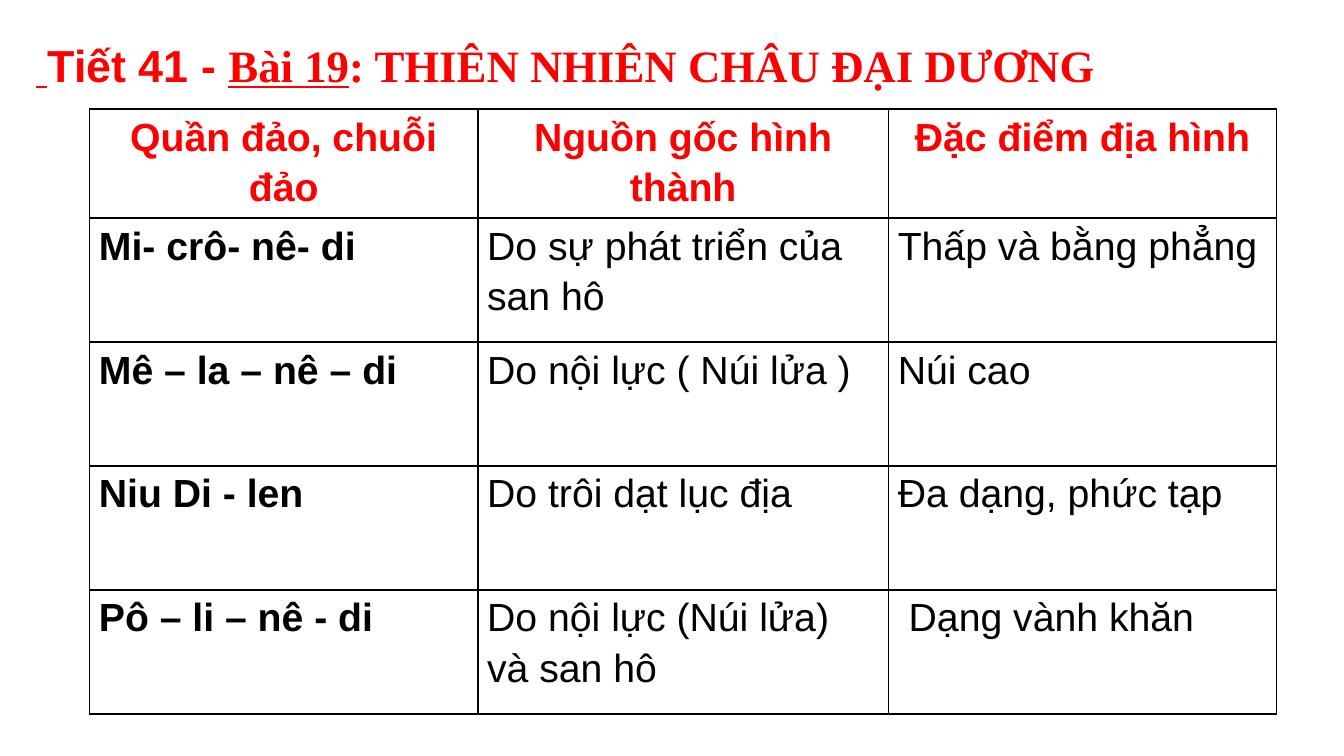
from lxml.etree import SubElement
from pptx import Presentation
from pptx.dml.color import RGBColor
from pptx.enum.text import PP_ALIGN
from pptx.oxml.ns import qn
from pptx.util import Pt

COLORS = {"red": "FF0000", "black": "000000"}
SANS, SERIF = "Arial", "Times New Roman"

TITLE = [  # text, font, underlined
    (" ", SERIF, True),
    ("Tiết 41 - ", SANS, False),
    ("Bài 19", SERIF, True),
    (": THIÊN NHIÊN CHÂU ĐẠI DƯƠNG", SERIF, False),
]
ISLANDS = [
    ("Quần đảo, chuỗi đảo", "Nguồn gốc hình thành", "Đặc điểm địa hình"),
    ("Mi- crô- nê- di", "Do sự phát triển của san hô", "Thấp và bằng phẳng"),
    ("Mê – la – nê – di", "Do nội lực ( Núi lửa )", "Núi cao"),
    ("Niu Di - len", "Do trôi dạt lục địa", "Đa dạng, phức tạp"),
    ("Pô – li – nê - di", "Do nội lực (Núi lửa) và san hô", " Dạng vành khăn"),
]
COL_WIDTHS = [208, 220, 208]
HEADER_HEIGHT, ROW_HEIGHT = 58.4, 66.4


def add_run(p, text, size, color, font=SANS, bold=False, underline=False):
    r = p.add_run()
    r.text = text
    r.font.name = font
    r.font.size = Pt(size)
    r.font.bold = bold
    r.font.underline = underline
    r.font.color.rgb = RGBColor.from_string(COLORS[color])


def add_title(slide):
    tf = slide.shapes.add_textbox(Pt(0), Pt(16.5), Pt(606), Pt(33)).text_frame
    tf.word_wrap = True
    p = tf.paragraphs[0]
    p.alignment = PP_ALIGN.CENTER
    for text, font, underline in TITLE:
        add_run(p, text, 24, "red", font, True, underline)


def set_borders(cell):
    # Border lines must come before the fill in the cell properties
    tc_pr = cell._tc.get_or_add_tcPr()
    for side in ("a:lnL", "a:lnR", "a:lnT", "a:lnB"):
        ln = SubElement(tc_pr, qn(side), w=str(Pt(1)))
        fill = SubElement(ln, qn("a:solidFill"))
        SubElement(fill, qn("a:srgbClr"), val=COLORS["black"])


def fill_cell(cell, text, header, bold):
    set_borders(cell)
    cell.fill.background()
    cell.margin_left = cell.margin_right = Pt(5)
    cell.margin_top = cell.margin_bottom = Pt(0)
    p = cell.text_frame.paragraphs[0]
    p.alignment = PP_ALIGN.CENTER if header else PP_ALIGN.LEFT
    p.line_spacing = 1.15
    add_run(p, text, 21, "red" if header else "black", bold=bold)


def add_island_table(slide):
    heights = [HEADER_HEIGHT] + [ROW_HEIGHT] * (len(ISLANDS) - 1)
    table = slide.shapes.add_table(
        len(ISLANDS), len(COL_WIDTHS), Pt(48), Pt(58.5),
        Pt(sum(COL_WIDTHS)), Pt(sum(heights))).table
    for column, width in zip(table.columns, COL_WIDTHS):
        column.width = Pt(width)
    for i, (height, texts) in enumerate(zip(heights, ISLANDS)):
        table.rows[i].height = Pt(height)
        for j, text in enumerate(texts):
            fill_cell(table.cell(i, j), text, i == 0, i == 0 or j == 0)


def main():
    prs = Presentation()
    prs.slide_width, prs.slide_height = Pt(720), Pt(405)
    slide = prs.slides.add_slide(prs.slide_layouts[6])
    add_island_table(slide)
    add_title(slide)
    prs.save("out.pptx")


if __name__ == "__main__":
    main()
